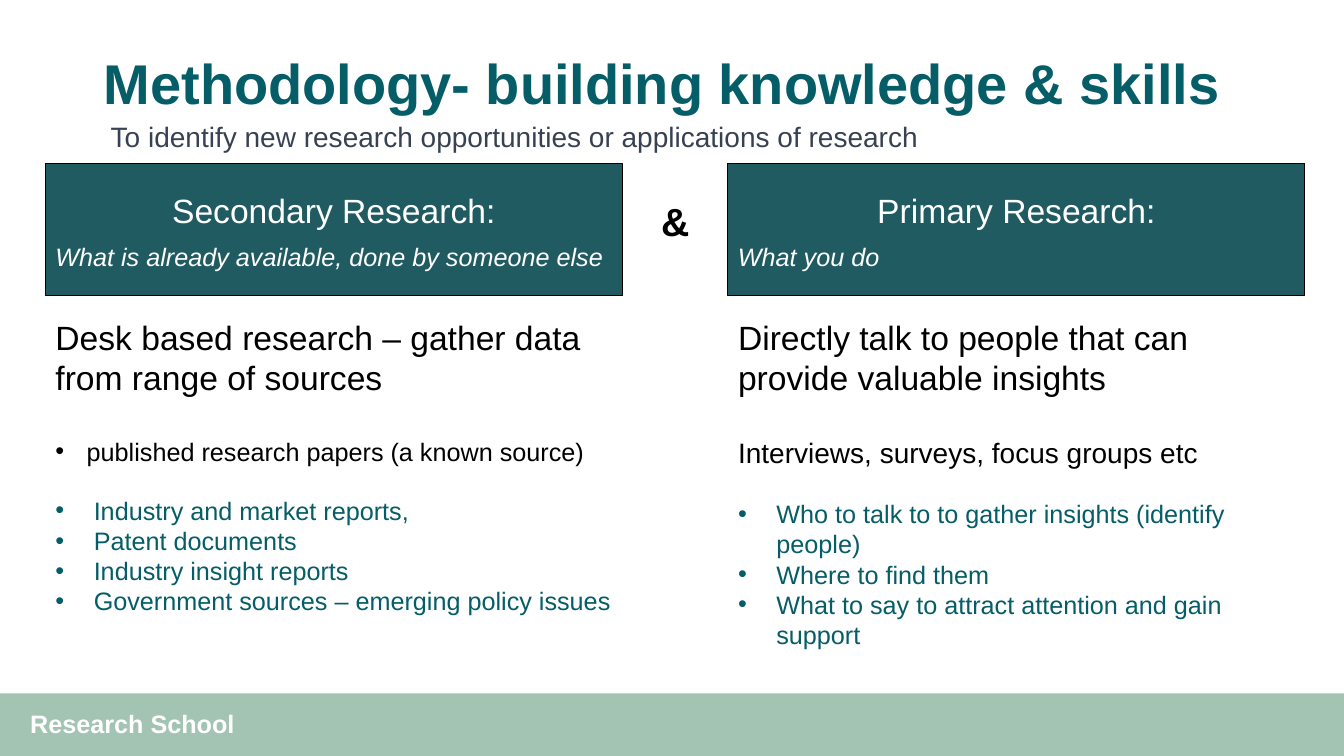
from lxml import etree
from pptx import Presentation
from pptx.dml.color import RGBColor
from pptx.enum.shapes import MSO_SHAPE
from pptx.enum.text import MSO_ANCHOR, MSO_AUTO_SIZE, PP_ALIGN
from pptx.oxml.ns import qn
from pptx.util import Inches, Pt

FONT = "Arial"
TEAL, BOX, GREEN = "055D67", "205B62", "85AF9A"
GREY, BLACK, WHITE = "374151", "000000", "FFFFFF"
COLUMN_W = 5.72

# Each list line: text, size, colour, hanging indent (0 = no bullet), space before
COLUMNS = [
    (0.45, "Secondary Research:", "What is already available, done by someone else", 3.13, [
        ("Desk based research – gather data from range of sources", 24, BLACK, 0, 0),
        ("published research papers (a known source)", 18, BLACK, 0.31, 27.6),
        ("Industry and market reports,", 18, TEAL, 0.38, 20.7),
        ("Patent documents", 18, TEAL, 0.38, 0),
        ("Industry insight reports", 18, TEAL, 0.38, 0),
        ("Government sources – emerging policy issues", 18, TEAL, 0.38, 0),
    ]),
    (7.22, "Primary Research:", "What you do", 3.84, [
        ("Directly talk to people that can provide valuable insights", 24, BLACK, 0, 0),
        ("Interviews, surveys, focus groups etc", 20, BLACK, 0, 27.6),
        ("Who to talk to to gather insights (identify people)", 18, TEAL, 0.38, 20.7),
        ("Where to find them", 18, TEAL, 0.38, 0),
        ("What to say to attract attention and gain support", 18, TEAL, 0.38, 0),
    ]),
]


def rgb(value):
    return RGBColor.from_string(value)


def write(p, text, size, color, bold=False, italic=False, align=PP_ALIGN.LEFT):
    p.text = text
    p.alignment = align
    for r in p.runs:
        r.font.name, r.font.size = FONT, Pt(size)
        r.font.bold, r.font.italic = bold, italic
        r.font.color.rgb = rgb(color)


def place(sp, x, y, w, h):
    sp.left, sp.top, sp.width, sp.height = (Inches(v) for v in (x, y, w, h))


def add_label(s, x, y, w, h, text, size, color, bold=False, wrap=True):
    tf = s.shapes.add_textbox(Inches(x), Inches(y), Inches(w), Inches(h)).text_frame
    tf.word_wrap = wrap
    write(tf.paragraphs[0], text, size, color, bold)


def add_box(s, x, y, w, h, fill):
    sp = s.shapes.add_shape(MSO_SHAPE.RECTANGLE, Inches(x), Inches(y), Inches(w), Inches(h))
    sp.shadow.inherit = False
    sp.fill.solid()
    sp.fill.fore_color.rgb = rgb(fill)
    sp.line.fill.background()
    return sp


def add_footer(s):
    band = add_box(s, 0, 6.88, 13.33, 0.62, GREEN)
    color = band.fill._xPr.find(qn("a:solidFill"))[0]
    etree.SubElement(color, qn("a:alpha"), val="75000")
    add_label(s, 0.2, 6.98, 2.65, 0.4, "Research School", 18, WHITE, bold=True)


def add_header(s, x, heading, caption):
    sp = add_box(s, x, 1.62, COLUMN_W, 1.31, BOX)
    sp.line.color.rgb = rgb(BLACK)
    sp.line.width = Pt(0.75)
    tf = sp.text_frame
    tf.word_wrap = True
    tf.vertical_anchor = MSO_ANCHOR.TOP
    tf.margin_top = Inches(0.31)
    write(tf.paragraphs[0], heading, 24, WHITE, align=PP_ALIGN.CENTER)
    p = tf.add_paragraph()
    write(p, caption, 18, WHITE, italic=True)
    p.space_before = Pt(10)
    for p in tf.paragraphs:
        p.line_spacing = 0.9


def set_bullet(p, indent):
    pPr = p._p.get_or_add_pPr()
    pPr.set("marL", str(Inches(indent)))
    pPr.set("indent", str(-Inches(indent)))
    if indent:
        etree.SubElement(pPr, qn("a:buFont"), typeface=FONT)
        etree.SubElement(pPr, qn("a:buChar"), char="•")
    else:
        etree.SubElement(pPr, qn("a:buNone"))


def fill_list(body, x, h, lines):
    place(body, x, 3.09, COLUMN_W, h)
    tf = body.text_frame
    tf.word_wrap = True
    tf.auto_size = MSO_AUTO_SIZE.NONE
    for i, (text, size, color, indent, before) in enumerate(lines):
        p = tf.add_paragraph() if i else tf.paragraphs[0]
        set_bullet(p, indent)
        write(p, text, size, color)
        p.space_before = Pt(before)


def main():
    prs = Presentation()
    prs.slide_width, prs.slide_height = Inches(13.33), Inches(7.5)
    s = prs.slides.add_slide(prs.slide_layouts[3])

    # Footer band
    add_footer(s)

    # Title and subtitle
    title = s.shapes.title
    place(title, 0.93, 0.34, 11.76, 1.04)
    tf = title.text_frame
    tf.vertical_anchor = MSO_ANCHOR.MIDDLE
    tf.auto_size = MSO_AUTO_SIZE.NONE
    write(tf.paragraphs[0], "Methodology- building knowledge & skills", 40, TEAL, bold=True)
    tf.paragraphs[0].line_spacing = 0.9
    add_label(s, 1, 1.14, 11.76, 0.44,
              "To identify new research opportunities or applications of research", 20, GREY)

    # Two research columns joined by an ampersand
    for idx, (x, heading, caption, h, lines) in enumerate(COLUMNS, 1):
        add_header(s, x, heading, caption)
        fill_list(s.placeholders[idx], x, h, lines)
    add_label(s, 6.46, 1.91, 0.49, 0.57, "&", 28, BLACK, bold=True, wrap=False)

    # Unused placeholders
    for ph in list(s.placeholders):
        if not ph.text_frame.text:
            ph.element.getparent().remove(ph.element)

    prs.save("out.pptx")


if __name__ == "__main__":
    main()
